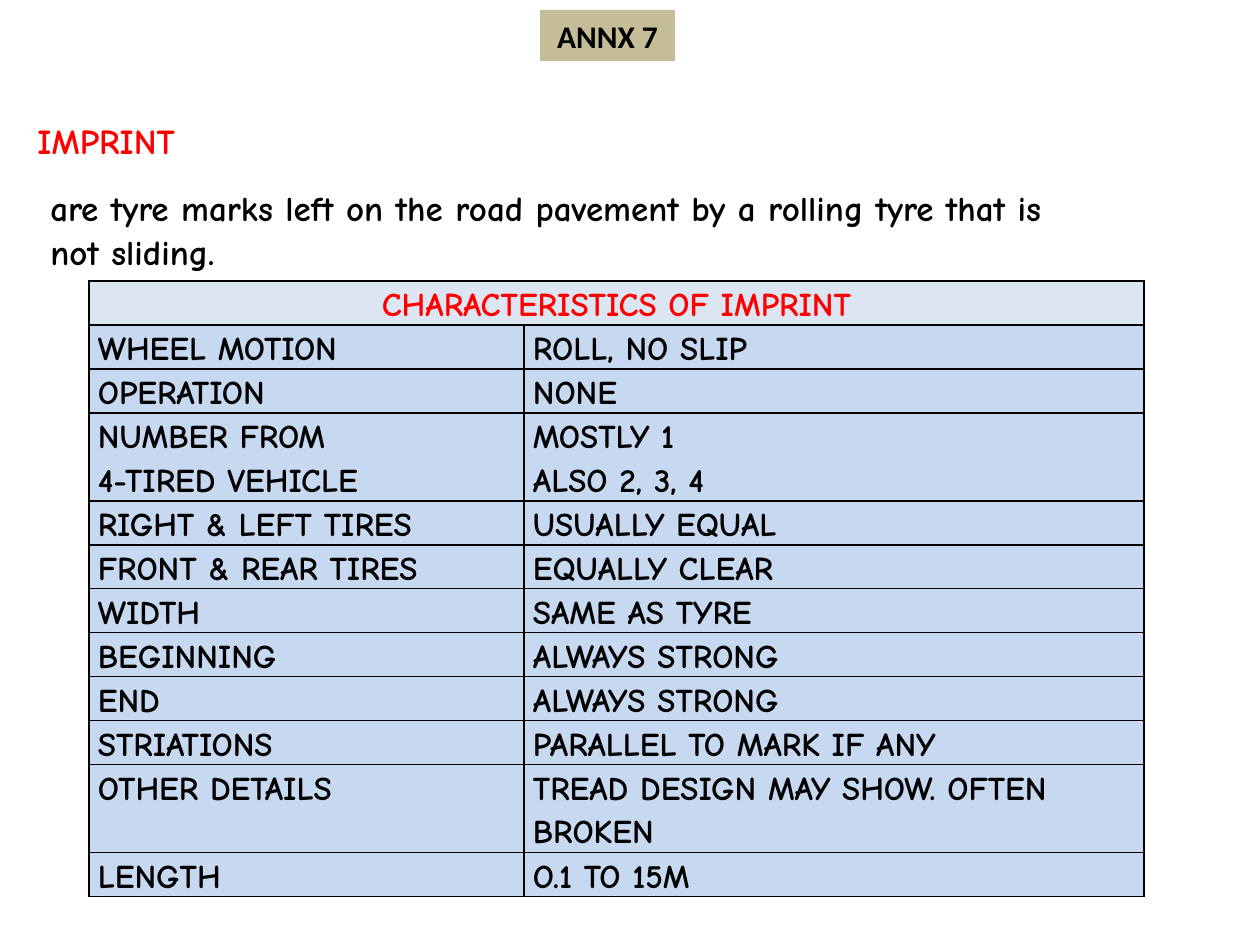
from dataclasses import dataclass
from typing import Any

from lxml import etree
from pptx import Presentation
from pptx.dml.color import RGBColor
from pptx.enum.shapes import MSO_SHAPE
from pptx.enum.text import MSO_ANCHOR, PP_ALIGN
from pptx.oxml.ns import qn
from pptx.util import Emu, Pt

RECTANGLE = MSO_SHAPE.RECTANGLE
LEFT, CENTER = PP_ALIGN.LEFT, PP_ALIGN.CENTER
TOP, MIDDLE = MSO_ANCHOR.TOP, MSO_ANCHOR.MIDDLE

PIXELS_PER_INCH = 126
EMU_PER_INCH = 914400

BLACK = RGBColor(0x00, 0x00, 0x00)
RED = RGBColor(0xFF, 0x00, 0x00)
TAN = RGBColor(0xC4, 0xBD, 0x97)
HEADER_BLUE = RGBColor(0xDC, 0xE6, 0xF2)
ROW_BLUE = RGBColor(0xC6, 0xD9, 0xF1)

LABEL_FONT = {"name": "Calibri", "size": Pt(18), "bold": True}
BODY_FONT = {"name": "Comic Neue", "size": Pt(20), "bold": True}
TABLE_FONT = {"name": "Comic Neue", "size": Pt(19), "bold": True}

ROW_HEIGHT = 44
COLUMN_WIDTHS = (435, 620)
CELL_MARGIN = 9


@dataclass(frozen=True)
class Line:
    text: str
    color: RGBColor = BLACK
    indent: int = 0
    space_before: int = 0


@dataclass(frozen=True)
class Trait:
    name: str
    value: str
    lines: int = 1


INTRODUCTION = (
    Line("IMPRINT", RED),
    Line("are tyre marks left on the road pavement by a rolling tyre that is",
         indent=13, space_before=22),
    Line("not sliding.", indent=13),
)

TRAITS = (
    Trait("WHEEL MOTION", "ROLL, NO SLIP"),
    Trait("OPERATION", "NONE"),
    Trait("NUMBER FROM\n4-TIRED VEHICLE", "MOSTLY 1\nALSO 2, 3, 4", 2),
    Trait("RIGHT & LEFT TIRES", "USUALLY EQUAL"),
    Trait("FRONT & REAR TIRES", "EQUALLY CLEAR"),
    Trait("WIDTH", "SAME AS TYRE"),
    Trait("BEGINNING", "ALWAYS STRONG"),
    Trait("END", "ALWAYS STRONG"),
    Trait("STRIATIONS", "PARALLEL TO MARK IF ANY"),
    Trait("OTHER DETAILS", "TREAD DESIGN MAY SHOW. OFTEN BROKEN", 2),
    Trait("LENGTH", "O.1 TO 15M"),
)


def px(value: int) -> Emu:
    return Emu(round(value * EMU_PER_INCH / PIXELS_PER_INCH))


def apply_format(target: Any, values: dict[str, Any]) -> None:
    for name, value in values.items():
        setattr(target, name, value)


def format_font(paragraph: Any, values: dict[str, Any], color: RGBColor) -> None:
    for run in paragraph.runs:
        apply_format(run.font, values)
        run.font.color.rgb = color


def draw_label(slide: Any) -> None:
    shape = slide.shapes.add_shape(RECTANGLE, px(540), px(10), px(135), px(51))
    shape.shadow.inherit = False
    shape.fill.solid()
    shape.fill.fore_color.rgb = TAN
    shape.line.fill.background()
    apply_format(shape.text_frame, {"word_wrap": False, "vertical_anchor": MIDDLE})
    paragraph = shape.text_frame.paragraphs[0]
    paragraph.text = "ANNX 7"
    paragraph.alignment = CENTER
    format_font(paragraph, LABEL_FONT, BLACK)


def draw_introduction(slide: Any) -> None:
    box = slide.shapes.add_textbox(px(25), px(111), px(1210), px(163))
    frame = box.text_frame
    frame.word_wrap = True
    for index, line in enumerate(INTRODUCTION):
        paragraph = frame.add_paragraph() if index else frame.paragraphs[0]
        paragraph.text = line.text
        paragraph.line_spacing = 1.06
        if line.indent:
            paragraph._p.get_or_add_pPr().set("marL", str(px(line.indent)))
        if line.space_before:
            paragraph.space_before = px(line.space_before)
        format_font(paragraph, BODY_FONT, line.color)


def add_borders(cell: Any) -> None:
    properties = cell._tc.get_or_add_tcPr()
    for side in ("a:lnL", "a:lnR", "a:lnT", "a:lnB"):
        border = etree.SubElement(properties, qn(side), w=str(Pt(1)))
        fill = etree.SubElement(border, qn("a:solidFill"))
        etree.SubElement(fill, qn("a:srgbClr"), val=str(BLACK))


def fill_cell(cell: Any, text: str, fill: RGBColor, color: RGBColor, alignment: Any) -> None:
    apply_format(cell, {
        "margin_left": px(CELL_MARGIN), "margin_right": px(CELL_MARGIN),
        "margin_top": 0, "margin_bottom": 0, "vertical_anchor": TOP,
    })
    add_borders(cell)
    cell.fill.solid()
    cell.fill.fore_color.rgb = fill
    cell.text_frame.text = text
    for paragraph in cell.text_frame.paragraphs:
        apply_format(paragraph, {"alignment": alignment, "line_spacing": 1.15})
        format_font(paragraph, TABLE_FONT, color)


def draw_traits(slide: Any) -> None:
    line_counts = [1] + [trait.lines for trait in TRAITS]
    frame = slide.shapes.add_table(
        len(line_counts), len(COLUMN_WIDTHS), px(89), px(281),
        px(sum(COLUMN_WIDTHS)), px(ROW_HEIGHT * sum(line_counts)))
    table = frame.table
    apply_format(table, {"first_row": False, "horz_banding": False})
    for column, width in zip(table.columns, COLUMN_WIDTHS):
        column.width = px(width)
    for row, lines in zip(table.rows, line_counts):
        row.height = px(ROW_HEIGHT * lines)

    table.cell(0, 0).merge(table.cell(0, 1))
    for column, title in enumerate(("CHARACTERISTICS OF IMPRINT", "")):
        fill_cell(table.cell(0, column), title, HEADER_BLUE, RED, CENTER)
    for row, trait in enumerate(TRAITS, start=1):
        for column, text in enumerate((trait.name, trait.value)):
            fill_cell(table.cell(row, column), text, ROW_BLUE, BLACK, LEFT)


def main() -> None:
    presentation = Presentation()
    apply_format(presentation, {"slide_width": px(1260), "slide_height": px(945)})
    slide = presentation.slides.add_slide(presentation.slide_layouts[6])
    draw_traits(slide)
    draw_introduction(slide)
    draw_label(slide)
    presentation.save("out.pptx")


if __name__ == "__main__":
    main()
